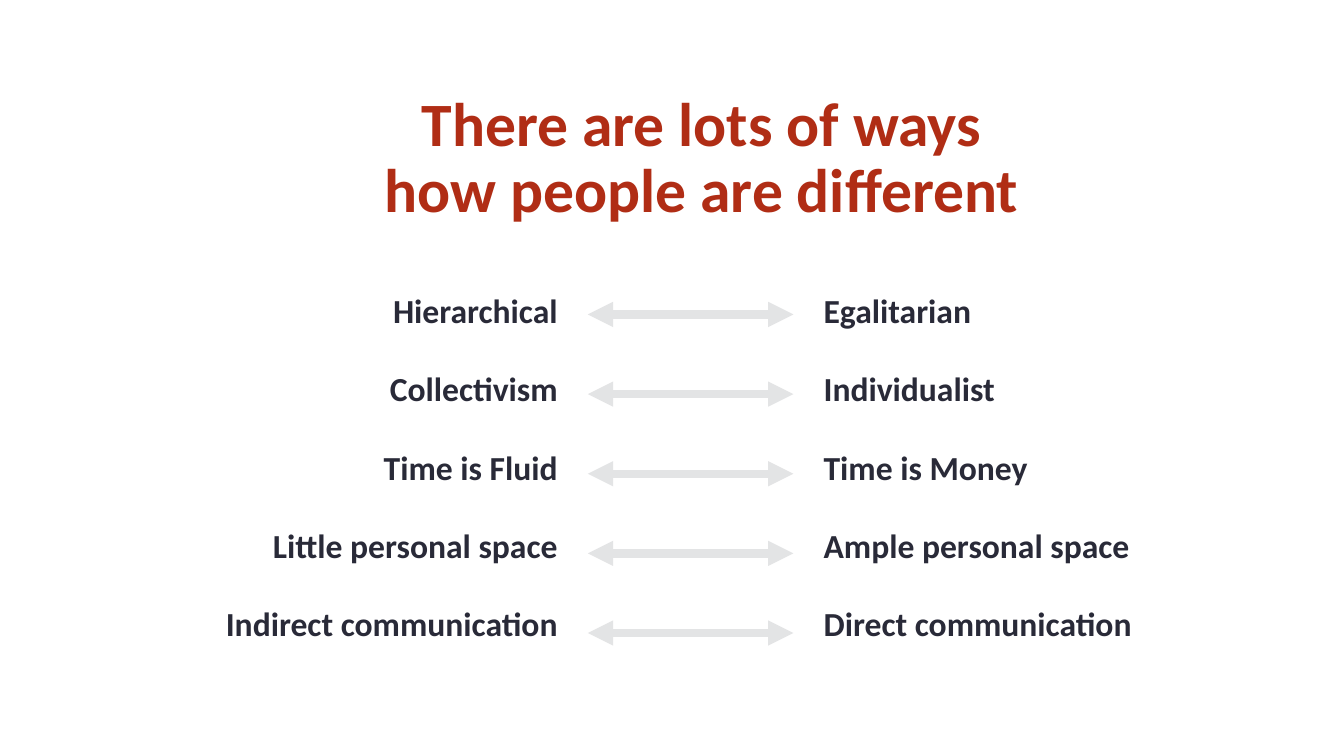
from dataclasses import dataclass

from pptx import Presentation
from pptx.dml.color import RGBColor
from pptx.enum.shapes import MSO_CONNECTOR
from pptx.enum.text import MSO_ANCHOR, MSO_AUTO_SIZE, PP_ALIGN
from pptx.oxml.ns import qn
from pptx.slide import Slide
from pptx.text.text import TextFrame
from pptx.util import Inches, Pt
from lxml.etree import SubElement

RED = RGBColor(0xB0, 0x2D, 0x15)
DARK = RGBColor(0x29, 0x2A, 0x38)
GREY = RGBColor(0xE3, 0xE4, 0xE5)

ARROW_LEFT, ARROW_RIGHT = 5.83, 7.87
ARROW_TOP, ARROW_STEP = 3.12, 0.79
COLUMN_TOP, COLUMN_HEIGHT = 2.83, 3.64


@dataclass(frozen=True)
class Contrast:
    left: str
    right: str


@dataclass(frozen=True)
class Column:
    left: float
    width: float
    align: PP_ALIGN
    entries: list[str]


CONTRASTS = [
    Contrast("Hierarchical", "Egalitarian"),
    Contrast("Collectivism", "Individualist"),
    Contrast("Time is Fluid", "Time is Money"),
    Contrast("Little personal space", "Ample personal space"),
    Contrast("Indirect communication", "Direct communication"),
]
COLUMNS = [
    Column(1.35, 4.28, PP_ALIGN.RIGHT, [c.left for c in CONTRASTS]),
    Column(8.07, 3.92, PP_ALIGN.LEFT, [c.right for c in CONTRASTS]),
]


def write_lines(tf: TextFrame, lines: list[str], size: int, color: RGBColor,
                paragraph_format: dict, gap: int = 0) -> None:
    """Fill the frame with bold paragraphs, with gap points between them."""
    font_format = {"name": "Calibri", "size": Pt(size), "bold": True}
    for i, line in enumerate(lines):
        p = tf.add_paragraph() if i else tf.paragraphs[0]
        p.space_before = Pt(gap if i else 0)
        for name, value in paragraph_format.items():
            setattr(p, name, value)
        r = p.add_run()
        r.text = line
        for name, value in font_format.items():
            setattr(r.font, name, value)
        r.font.color.rgb = color


def add_title(s: Slide) -> None:
    sp = s.shapes.title
    sp.left, sp.top = Inches(3.67), Inches(0.85)
    sp.width, sp.height = Inches(6.58), Inches(1.47)
    tf = sp.text_frame
    frame_format = {"word_wrap": True, "auto_size": MSO_AUTO_SIZE.NONE,
                    "vertical_anchor": MSO_ANCHOR.MIDDLE}
    for name, value in frame_format.items():
        setattr(tf, name, value)
    write_lines(tf, ["There are lots of ways how people are different"], 44, RED,
                {"alignment": PP_ALIGN.CENTER, "line_spacing": 0.9})


def add_column(s: Slide, column: Column) -> None:
    sp = s.shapes.add_textbox(Inches(column.left), Inches(COLUMN_TOP),
                              Inches(column.width), Inches(COLUMN_HEIGHT))
    tf = sp.text_frame
    tf.word_wrap = True
    tf.auto_size = MSO_AUTO_SIZE.SHAPE_TO_FIT_TEXT
    write_lines(tf, column.entries, 24, DARK, {"alignment": column.align}, gap=27)


def add_double_arrow(s: Slide, y: float) -> None:
    sp = s.shapes.add_connector(MSO_CONNECTOR.STRAIGHT, Inches(ARROW_LEFT), Inches(y),
                                Inches(ARROW_RIGHT), Inches(y))
    sp.line.color.rgb = GREY
    sp.line.width = Pt(6)
    ln = sp.line._get_or_add_ln()
    for end in ("a:headEnd", "a:tailEnd"):
        SubElement(ln, qn(end), type="triangle")
    SubElement(ln.getparent(), qn("a:effectLst"))


def main() -> None:
    prs = Presentation()
    prs.slide_width, prs.slide_height = Inches(13.33), Inches(7.5)
    s = prs.slides.add_slide(prs.slide_layouts[5])
    add_title(s)
    for column in COLUMNS:
        add_column(s, column)
    for i in range(len(CONTRASTS)):
        add_double_arrow(s, ARROW_TOP + i * ARROW_STEP)
    prs.save("out.pptx")


if __name__ == "__main__":
    main()
